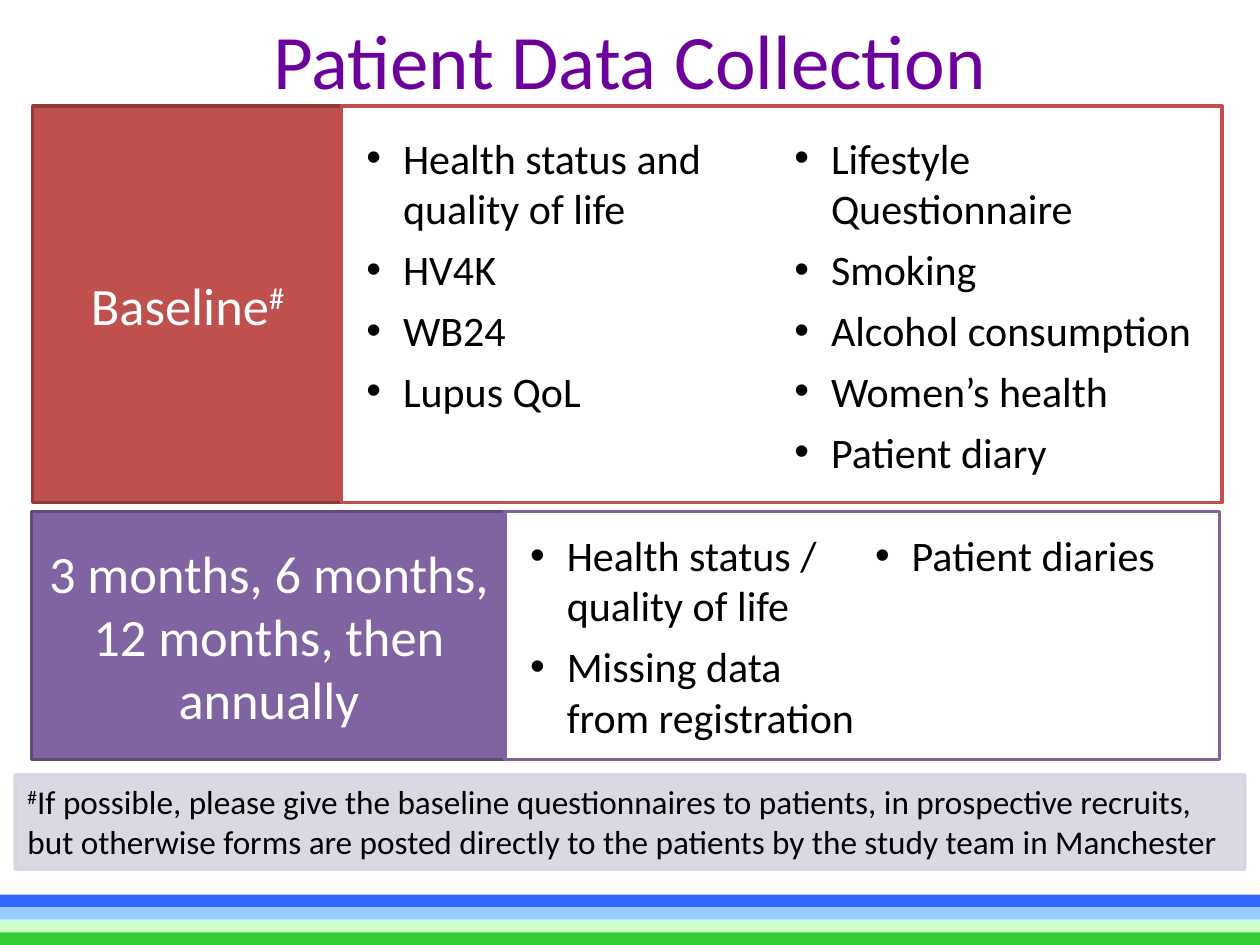
from dataclasses import dataclass

import pptx
import pptx.dml.color
import pptx.enum.shapes
import pptx.enum.text
import pptx.oxml
import pptx.oxml.ns
import pptx.util
from pptx.util import Inches

ALIGN = pptx.enum.text.PP_ALIGN
ANCHOR = pptx.enum.text.MSO_ANCHOR


@dataclass(frozen=True)
class Theme:
    font: str = "Calibri"
    title_size: int = 44
    label_size: int = 30
    bullet_size: int = 24
    footnote_size: int = 19
    border: int = 2
    title: str = "6D009D"
    text: str = "000000"
    light: str = "FFFFFF"
    footnote: str = "D8D3E0"
    footnote_opacity: int = 90
    stripes: tuple[str, ...] = ("3366FF", "99CCFF", "CCFFCC", "33CC33")


@dataclass(frozen=True)
class Box:
    left: float
    top: float
    width: float
    height: float

    def lengths(self) -> tuple[int, ...]:
        return tuple(Inches(n) for n in (self.left, self.top, self.width, self.height))


@dataclass(frozen=True)
class Span:
    text: str
    superscript: bool = False


@dataclass(frozen=True)
class Bullet:
    text: str
    space_after: int = 6


@dataclass(frozen=True)
class Stage:
    label_box: Box
    panel_box: Box
    color: str
    label_border: str
    label: tuple[Span, ...]
    bullets: tuple[Bullet, ...]


THEME = Theme()
STAGES = (
    Stage(
        Box(0.26, 0.84, 2.46, 3.15), Box(2.71, 0.84, 6.99, 3.15), "C0504D", "8E3B39",
        (Span("Baseline"), Span("#", superscript=True)),
        (
            Bullet("Health status and quality of life"),
            Bullet("HV4K"),
            Bullet("WB24"),
            Bullet("Lupus QoL", space_after=36),  # sends the rest to the second column
            Bullet("Lifestyle Questionnaire"),
            Bullet("Smoking"),
            Bullet("Alcohol consumption"),
            Bullet("Women’s health"),
            Bullet("Patient diary"),
        ),
    ),
    Stage(
        Box(0.25, 4.06, 3.77, 1.97), Box(4.01, 4.06, 5.67, 1.97), "8064A2", "5F4A78",
        (Span("3 months, 6 months, 12 months, then annually"),),
        (
            Bullet("Health status / quality of life"),
            Bullet("Missing data from registration"),
            Bullet("Patient diaries"),
        ),
    ),
)
FOOTNOTE = (
    Span("#", superscript=True),
    Span(
        "If possible, please give the baseline questionnaires to patients, in prospective "
        "recruits, but otherwise forms are posted directly to the patients by the study "
        "team in Manchester"
    ),
)


def rgb(color: str) -> pptx.dml.color.RGBColor:
    return pptx.dml.color.RGBColor.from_string(color)


def add_rectangle(slide, box: Box, fill: str, border: str | None = None):
    shape = slide.shapes.add_shape(pptx.enum.shapes.MSO_SHAPE.RECTANGLE, *box.lengths())
    shape.shadow.inherit = False
    shape.fill.solid()
    shape.fill.fore_color.rgb = rgb(fill)
    if border is None:
        shape.line.fill.background()
    else:
        shape.line.color.rgb = rgb(border)
        shape.line.width = pptx.util.Pt(THEME.border)
    shape.text_frame.word_wrap = True
    return shape


def write(paragraph, spans: tuple[Span, ...], size: int, color: str, alignment) -> None:
    paragraph.alignment = alignment
    for span in spans:
        run = paragraph.add_run()
        run.text = span.text
        run.font.name = THEME.font
        run.font.size = pptx.util.Pt(size)
        run.font.color.rgb = rgb(color)
        if span.superscript:
            run._r.get_or_add_rPr().set("baseline", "30000")


def make_bullet(paragraph) -> None:
    """Give the paragraph a round bullet with a hanging indent."""
    properties = paragraph._p.get_or_add_pPr()
    properties.set("marL", str(Inches(0.39)))
    properties.set("indent", str(Inches(-0.29)))
    namespace = pptx.oxml.ns.nsdecls("a")
    for xml in (
        f'<a:buFont {namespace} typeface="Arial"/>',
        f'<a:buChar {namespace} char="•"/>',
    ):
        properties.append(pptx.oxml.parse_xml(xml))


def set_opacity(shape, percent: int) -> None:
    """Make the solid fill and the border of the shape partly transparent."""
    for color in shape._element.spPr.iter(pptx.oxml.ns.qn("a:srgbClr")):
        color.append(pptx.oxml.parse_xml(
            f'<a:alpha {pptx.oxml.ns.nsdecls("a")} val="{percent * 1000}"/>'
        ))


def add_stripes(slide) -> None:
    height = 0.1
    for index, color in enumerate(THEME.stripes):
        add_rectangle(slide, Box(0, 7.1 + index * height, 10, height), color)


def add_title(slide, text: str) -> None:
    text_frame = slide.shapes.add_textbox(*Box(0.5, 0.05, 9, 1.25).lengths()).text_frame
    text_frame.word_wrap = True
    write(text_frame.paragraphs[0], (Span(text),), THEME.title_size, THEME.title, ALIGN.CENTER)


def add_footnote(slide) -> None:
    shape = add_rectangle(slide, Box(0.12, 6.15, 9.76, 0.75), THEME.footnote, THEME.footnote)
    set_opacity(shape, THEME.footnote_opacity)
    shape.text_frame.vertical_anchor = ANCHOR.TOP
    write(shape.text_frame.paragraphs[0], FOOTNOTE, THEME.footnote_size, THEME.text, ALIGN.LEFT)


def add_label(slide, stage: Stage) -> None:
    text_frame = add_rectangle(
        slide, stage.label_box, stage.color, stage.label_border
    ).text_frame
    text_frame.vertical_anchor = ANCHOR.MIDDLE
    write(text_frame.paragraphs[0], stage.label, THEME.label_size, THEME.light, ALIGN.CENTER)


def add_panel(slide, stage: Stage) -> None:
    """Draw the white panel with its bullets in two columns."""
    text_frame = add_rectangle(slide, stage.panel_box, THEME.light, stage.color).text_frame
    text_frame.vertical_anchor = ANCHOR.MIDDLE
    text_frame._txBody.bodyPr.set("numCol", "2")
    text_frame.text = "\n".join(bullet.text for bullet in stage.bullets)
    for paragraph, bullet in zip(text_frame.paragraphs, stage.bullets):
        paragraph.alignment = ALIGN.LEFT
        paragraph.space_after = pptx.util.Pt(bullet.space_after)
        make_bullet(paragraph)
        font = paragraph.runs[0].font
        font.name = THEME.font
        font.size = pptx.util.Pt(THEME.bullet_size)
        font.color.rgb = rgb(THEME.text)


def main() -> None:
    presentation = pptx.Presentation()
    presentation.slide_width = Inches(10)
    presentation.slide_height = Inches(7.5)
    slide = presentation.slides.add_slide(presentation.slide_layouts[6])
    add_stripes(slide)
    add_title(slide, "Patient Data Collection")
    add_footnote(slide)
    for stage in STAGES:
        add_label(slide, stage)
    for stage in STAGES:
        add_panel(slide, stage)
    presentation.save("out.pptx")


if __name__ == "__main__":
    main()
